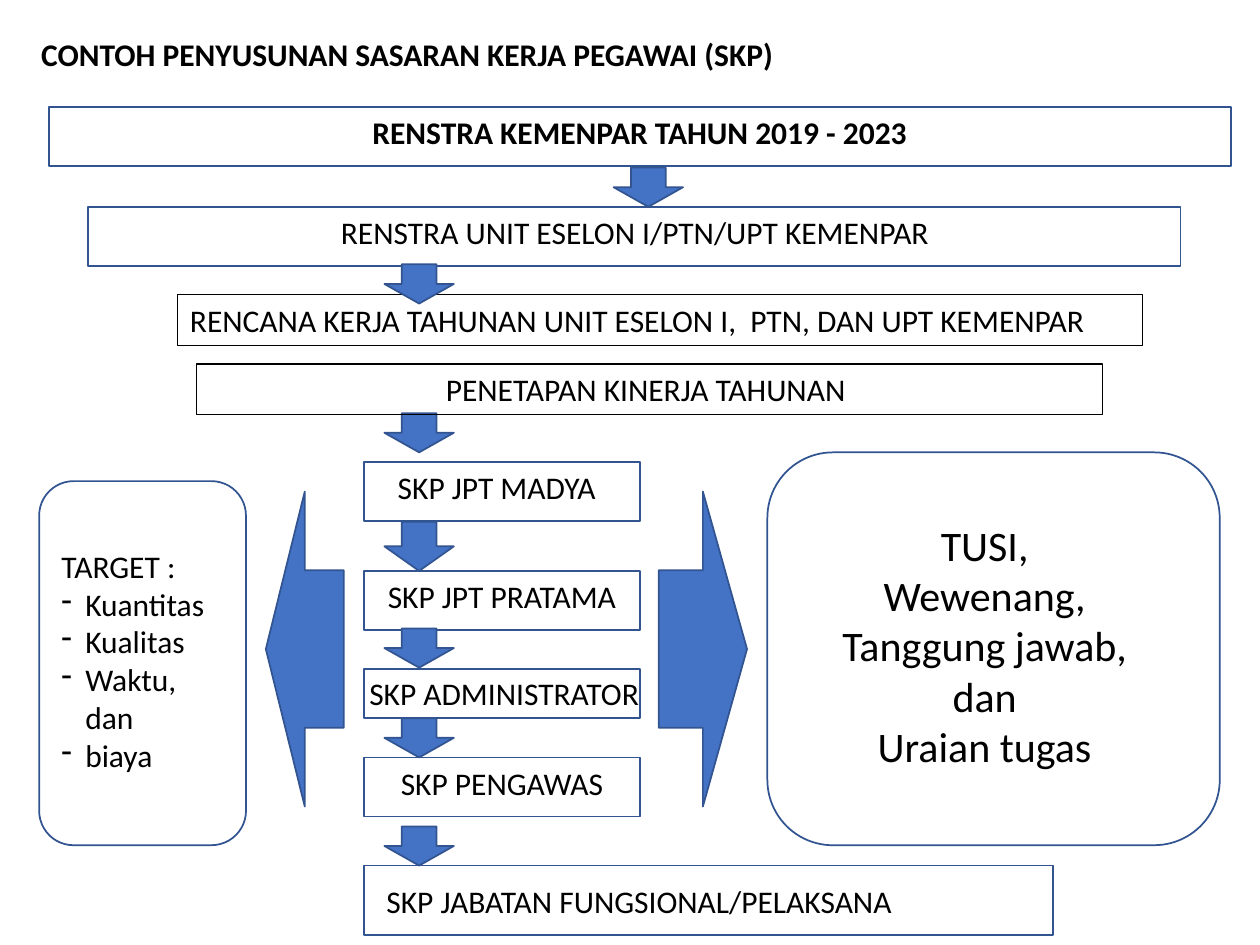
from pptx import Presentation
from pptx.dml.color import RGBColor
from pptx.enum.shapes import MSO_SHAPE
from pptx.enum.text import MSO_ANCHOR, PP_ALIGN
from pptx.oxml.ns import qn
from pptx.util import Cm, Pt
from lxml.etree import SubElement

FONT = "Calibri"
BLACK, WHITE, BLUE, EDGE = "000000", "FFFFFF", "4472C4", "325491"
ROW = 1.19   # height of a framed row
LINE = 1.02  # height of one line of text


def paint(code):
    return RGBColor.from_string(code)


class Chart:
    def __init__(self, slide):
        self.slide = slide

    def shape(self, kind, x, y, w, h, fill=WHITE, edge=EDGE, width=1):
        item = self.slide.shapes.add_shape(kind, Cm(x), Cm(y), Cm(w), Cm(h))
        item.shadow.inherit = False
        if fill:
            item.fill.solid()
            item.fill.fore_color.rgb = paint(fill)
        else:
            item.fill.background()
        item.line.color.rgb = paint(edge)
        item.line.width = Pt(width)
        return item

    def box(self, x, y, w, h=ROW):
        return self.shape(MSO_SHAPE.RECTANGLE, x, y, w, h)

    def panel(self, x, y, w, h):
        return self.shape(MSO_SHAPE.ROUNDED_RECTANGLE, x, y, w, h)

    def arrow(self, kind, x, y, w, h):
        return self.shape(kind, x, y, w, h, BLUE)

    def down(self, x, y, h=0.79):
        return self.arrow(MSO_SHAPE.DOWN_ARROW, x, y, 1.4, h)

    def label(self, item, text, align, size=18, bold=False):
        frame = item.text_frame
        frame.word_wrap = True
        frame.vertical_anchor = MSO_ANCHOR.TOP
        frame.text = text
        for para in frame.paragraphs:
            para.alignment = align
            for run in para.runs:
                run.font.name = FONT
                run.font.size = Pt(size)
                run.font.bold = bold
                run.font.color.rgb = paint(BLACK)
        return frame

    def text(self, text, x, y, w, h=LINE, align=PP_ALIGN.CENTER, **style):
        item = self.slide.shapes.add_textbox(Cm(x), Cm(y), Cm(w), Cm(h))
        return self.label(item, text, align, **style)

    def frame(self, text, x, y, w, align=PP_ALIGN.CENTER):
        item = self.shape(MSO_SHAPE.RECTANGLE, x, y, w, LINE, None, BLACK, 0.75)
        return self.label(item, text, align)

    def dash(self, para):
        props = para._p.get_or_add_pPr()
        props.set("marL", str(Cm(0.48)))
        props.set("indent", str(-Cm(0.48)))
        SubElement(props, qn("a:buFontTx"))
        SubElement(props, qn("a:buChar")).set("char", "-")


def main():
    deck = Presentation()
    deck.slide_width, deck.slide_height = Cm(25.4), Cm(19.05)
    chart = Chart(deck.slides.add_slide(deck.slide_layouts[6]))

    # Title
    chart.text("CONTOH PENYUSUNAN SASARAN KERJA PEGAWAI (SKP)",
               0.58, 0.58, 23.42, align=PP_ALIGN.LEFT, bold=True)

    # Plans
    chart.box(0.99, 2.16, 23.83)
    chart.text("RENSTRA KEMENPAR TAHUN 2019 - 2023", 1.19, 2.16, 23.42, bold=True)
    chart.box(1.78, 4.17, 22.02)
    chart.text("RENSTRA UNIT ESELON I/PTN/UPT KEMENPAR", 1.98, 4.17, 21.64)
    chart.frame("RENCANA KERJA TAHUNAN UNIT ESELON I,  PTN, DAN UPT KEMENPAR",
                3.58, 5.94, 19.46, PP_ALIGN.LEFT)

    # SKP levels: name, box top and height, text left, top and width
    levels = [
        ("SKP JPT MADYA", 9.32, ROW, 7.54, 9.32, 4.95),
        ("SKP JPT PRATAMA", 11.51, ROW, 7.34, 11.51, 5.56),
        ("SKP ADMINISTRATOR", 13.49, 0.99, 7.09, 13.46, 6.15),
        ("SKP PENGAWAS", 15.27, ROW, 7.54, 15.27, 5.16),
    ]
    for name, top, high, left, y, wide in levels:
        chart.box(7.34, top, 5.56, high)
        chart.text(name, left, y, wide)
    chart.box(7.34, 17.45, 13.89, 1.4)
    chart.text("SKP JABATAN FUNGSIONAL/PELAKSANA",
               7.54, 17.65, 13.89, align=PP_ALIGN.LEFT)

    # Down arrows
    chart.down(12.37, 3.38)
    for y in (5.33, 8.33, 12.67, 14.48, 16.66):
        chart.down(7.75, y)
    chart.down(7.75, 10.52, 0.99)
    chart.frame("PENETAPAN KINERJA TAHUNAN ", 3.96, 7.34, 18.26)

    # Duties on the right
    chart.arrow(MSO_SHAPE.RIGHT_ARROW, 13.28, 9.91, 1.78, 6.35)
    chart.panel(15.47, 9.12, 9.12, 7.92)
    chart.text("TUSI,\nWewenang,\nTanggung jawab, dan\nUraian tugas",
               16.08, 10.34, 7.54, 5.38, size=24)

    # Targets on the left
    chart.arrow(MSO_SHAPE.LEFT_ARROW, 5.36, 9.91, 1.57, 6.35)
    chart.panel(0.79, 9.7, 4.17, 7.34)
    goals = chart.text("TARGET :\nKuantitas\nKualitas\nWaktu, dan\nbiaya",
                       0.99, 10.9, 3.58, 4.88, align=PP_ALIGN.LEFT)
    for para in goals.paragraphs[1:]:
        chart.dash(para)

    deck.save("out.pptx")


if __name__ == "__main__":
    main()
